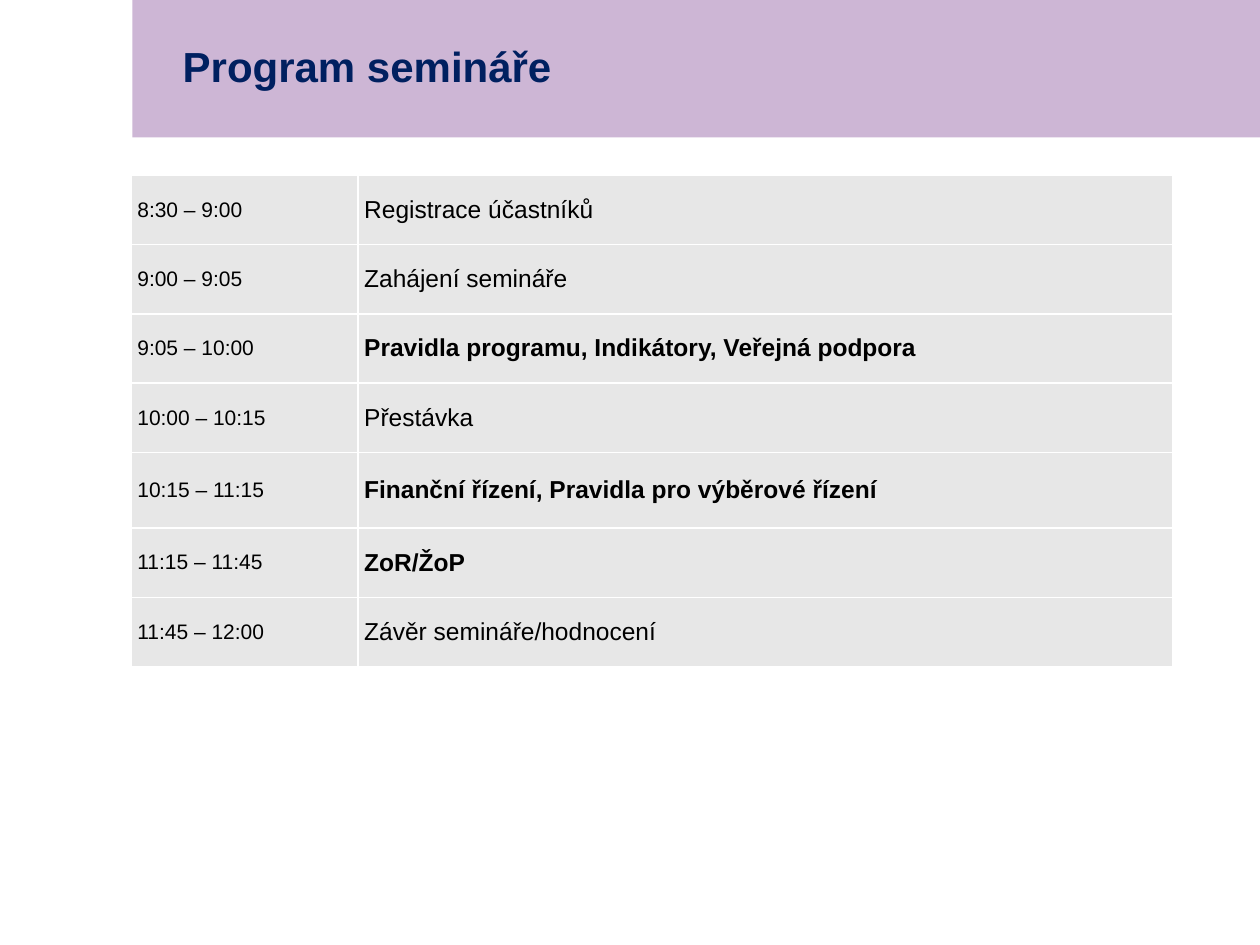
from lxml.etree import SubElement
from pptx import Presentation
from pptx.dml.color import RGBColor
from pptx.enum.shapes import MSO_SHAPE
from pptx.enum.text import MSO_ANCHOR, PP_ALIGN
from pptx.oxml.ns import qn
from pptx.util import Inches, Pt

TITLE = "Program semináře"
PROGRAM = [
    # (time, topic, bold topic, row height)
    ("8:30 – 9:00", "Registrace účastníků", False, 0.55),
    ("9:00 – 9:05", "Zahájení semináře", False, 0.55),
    ("9:05 – 10:00", "Pravidla programu, Indikátory, Veřejná podpora", True, 0.55),
    ("10:00 – 10:15", "Přestávka", False, 0.55),
    ("10:15 – 11:15", "Finanční řízení, Pravidla pro výběrové řízení", True, 0.6),
    ("11:15 – 11:45", "ZoR/ŽoP", True, 0.55),
    ("11:45 – 12:00", "Závěr semináře/hodnocení", False, 0.55),
]
COL_WIDTHS = [1.8, 6.47]
COLORS = {"band": "CDB6D5", "title": "002060", "text": "000000",
          "cell": "E7E7E7", "border": "FFFFFF"}
FONT = "Arial"


def rgb(name):
    """Return the named colour."""
    return RGBColor.from_string(COLORS[name])


def write(tf, text, size, color="text", bold=False, spacing=1.0):
    """Write one left-aligned paragraph into a text frame."""
    p = tf.paragraphs[0]
    p.alignment, p.line_spacing = PP_ALIGN.LEFT, spacing
    r = p.add_run()
    r.text = text
    r.font.name, r.font.size, r.font.bold = FONT, Pt(size), bold
    r.font.color.rgb = rgb(color)


def add_borders(cell):
    """Draw a thin line on each side of a cell, placed ahead of its fill."""
    tc_pr = cell._tc.get_or_add_tcPr()
    for i, side in enumerate(("lnL", "lnR", "lnT", "lnB")):
        ln = SubElement(tc_pr, qn(f"a:{side}"), w=str(Pt(1)))
        fill = SubElement(ln, qn("a:solidFill"))
        SubElement(fill, qn("a:srgbClr"), val=COLORS["border"])
        tc_pr.insert(i, ln)


def add_header(s):
    """Add the colour band and the title on top of it."""
    band = s.shapes.add_shape(MSO_SHAPE.RECTANGLE, Inches(1.05), 0,
                              Inches(8.95), Inches(1.09))
    band.shadow.inherit = False
    band.fill.solid()
    band.fill.fore_color.rgb = rgb("band")
    band.line.fill.background()
    title = s.shapes.title
    band._element.addnext(title._element)
    title.left, title.top = Inches(1.35), 0
    title.width, title.height = Inches(8.35), Inches(1.09)
    title.text_frame.vertical_anchor = MSO_ANCHOR.MIDDLE
    write(title.text_frame, TITLE, 24, color="title", bold=True, spacing=0.9)


def add_program(s):
    """Add the timetable."""
    frame = s.shapes.add_table(len(PROGRAM), len(COL_WIDTHS), Inches(1.04), Inches(1.39),
                               Inches(sum(COL_WIDTHS)), Inches(sum(row[3] for row in PROGRAM)))
    table = frame.table
    table.first_row = table.horz_banding = False
    for col, width in zip(table.columns, COL_WIDTHS):
        col.width = Inches(width)
    for row, (time, topic, bold, height) in zip(table.rows, PROGRAM):
        row.height = Inches(height)
        entries = [(time, 12, False), (topic, 14, bold)]
        for cell, (text, size, strong) in zip(row.cells, entries):
            cell.fill.solid()
            cell.fill.fore_color.rgb = rgb("cell")
            cell.vertical_anchor = MSO_ANCHOR.MIDDLE
            cell.margin_left = cell.margin_right = Inches(0.05)
            cell.margin_top = cell.margin_bottom = 0
            write(cell.text_frame, text, size, bold=strong)
            add_borders(cell)


def main():
    """Build and save the slide."""
    prs = Presentation()
    prs.slide_width, prs.slide_height = Inches(10), Inches(7.5)
    s = prs.slides.add_slide(prs.slide_layouts[5])
    add_header(s)
    add_program(s)
    prs.save("out.pptx")


if __name__ == "__main__":
    main()
